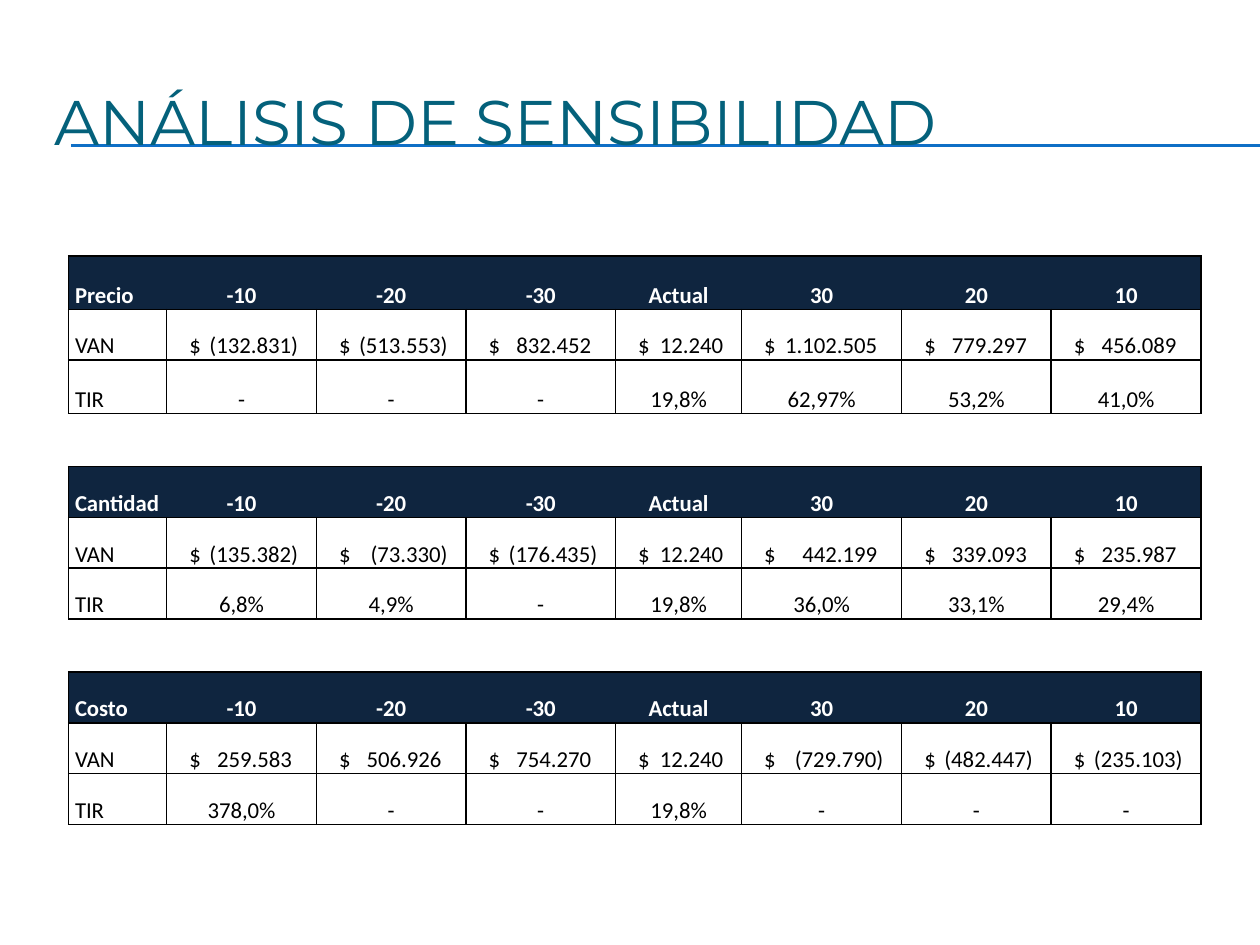
import pptx
import pptx.dml.color
import pptx.enum.shapes
import pptx.enum.text
import pptx.oxml
import pptx.oxml.ns
import pptx.util
from lxml import etree

Pt = pptx.util.Pt
qn = pptx.oxml.ns.qn

NAVY, TEAL, BLUE, BLACK, WHITE = "0F253F", "04617B", "0F6FC6", "000000", "FFFFFF"

COLUMN_WIDTHS = [56, 85.5, 85.5, 85.5, 72, 91.5, 85.5, 85.5]
AMOUNT_WIDTHS = [0, 62, 62, 62, 52, 68, 62, 62]
ROW_HEIGHTS = [30.5, 29, 30.5, 30.5, 29, 29, 29, 30.5, 29, 29, 29]
CHANGES = ["-10", "-20", "-30", "Actual", "30", "20", "10"]
SCENARIOS = [
    ("Precio",
     ["(132.831)", "(513.553)", "832.452", "12.240", "1.102.505", "779.297", "456.089"],
     ["-", "-", "-", "19,8%", "62,97%", "53,2%", "41,0%"]),
    ("Cantidad",
     ["(135.382)", "(73.330)", "(176.435)", "12.240", "442.199", "339.093", "235.987"],
     ["6,8%", "4,9%", "-", "19,8%", "36,0%", "33,1%", "29,4%"]),
    ("Costo",
     ["259.583", "506.926", "754.270", "12.240", "(729.790)", "(482.447)", "(235.103)"],
     ["378,0%", "-", "-", "19,8%", "-", "-", "-"]),
]


def rgb(color):
    return pptx.dml.color.RGBColor.from_string(color)


def add_title(slide, text):
    s = slide.shapes.add_textbox(Pt(24), Pt(36), Pt(684), Pt(66))
    tf = s.text_frame
    tf.word_wrap = True
    tf.vertical_anchor = pptx.enum.text.MSO_ANCHOR.MIDDLE
    p = tf.paragraphs[0]
    p.text = text
    p.font.size = Pt(36)
    p.font.name = "Montserrat"
    p.font.color.rgb = rgb(TEAL)


def add_rule(slide, y):
    s = slide.shapes.add_connector(
        pptx.enum.shapes.MSO_CONNECTOR.STRAIGHT, Pt(40.5), Pt(y), Pt(720), Pt(y))
    s.line.color.rgb = rgb(BLUE)
    s.line.width = Pt(0.75)
    etree.SubElement(s._element.spPr, qn("a:effectLst"))


def set_borders(cell, sides):
    """Draw the named sides (letters of LRTB) in black and hide the others."""
    tcPr = cell._tc.get_or_add_tcPr()
    for i, side in enumerate("LRTB"):
        ln = etree.Element(qn(f"a:ln{side}"), w=str(Pt(1)))
        if side in sides:
            fill = etree.SubElement(ln, qn("a:solidFill"))
            etree.SubElement(fill, qn("a:srgbClr"), val=BLACK)
        else:
            etree.SubElement(ln, qn("a:noFill"))
        tcPr.insert(i, ln)


def style_cell(cell, sides, fill=None):
    if fill:
        cell.fill.solid()
        cell.fill.fore_color.rgb = rgb(fill)
    else:
        cell.fill.background()
    set_borders(cell, sides)


def write_cell(cell, text, header=False, centred=True):
    cell.vertical_anchor = pptx.enum.text.MSO_ANCHOR.BOTTOM
    cell.margin_left = cell.margin_right = Pt(3.6)
    cell.margin_top = cell.margin_bottom = 0
    p = cell.text_frame.paragraphs[0]
    p.text = text
    align = pptx.enum.text.PP_ALIGN
    p.alignment = align.CENTER if centred else align.LEFT
    p.font.size = Pt(13)
    p.font.name = "Calibri"
    p.font.bold = header
    p.font.color.rgb = rgb(WHITE if header else BLACK)


def write_amount(cell, amount, width):
    """Put the currency sign left and the amount at a right tab, brackets hanging."""
    write_cell(cell, f"$\t{amount}", centred=False)
    cell.margin_left = Pt(13)
    position = width if amount.endswith(")") else width - 3.5
    pPr = cell.text_frame.paragraphs[0]._p.get_or_add_pPr()
    tabs = etree.Element(qn("a:tabLst"))
    etree.SubElement(tabs, qn("a:tab"), pos=str(Pt(position)), algn="r")
    pPr.insert(0, tabs)


def fill_scenario(table, top, name, amounts, rates):
    last = len(CHANGES)
    for c, text in enumerate([name] + CHANGES):
        cell = table.cell(top, c)
        write_cell(cell, text, header=True, centred=c > 0)
        style_cell(cell, "TB" + {0: "L", last: "R"}.get(c, ""), NAVY)
    for c, text in enumerate(["VAN"] + amounts):
        cell = table.cell(top + 1, c)
        if c:
            write_amount(cell, text, AMOUNT_WIDTHS[c])
        else:
            write_cell(cell, text, centred=False)
        style_cell(cell, "LRTB")
    for c, text in enumerate(["TIR"] + rates):
        cell = table.cell(top + 2, c)
        write_cell(cell, text, centred=c > 0)
        style_cell(cell, "LRTB")


def add_sensitivity_table(slide):
    table = slide.shapes.add_table(
        len(ROW_HEIGHTS), len(COLUMN_WIDTHS), Pt(39.25), Pt(146.25),
        Pt(sum(COLUMN_WIDTHS)), Pt(sum(ROW_HEIGHTS))).table
    table.first_row = table.horz_banding = False
    for column, width in zip(table.columns, COLUMN_WIDTHS):
        column.width = Pt(width)
    for row, height in zip(table.rows, ROW_HEIGHTS):
        row.height = Pt(height)
    for i, scenario in enumerate(SCENARIOS):
        top = 4 * i
        fill_scenario(table, top, *scenario)
        if i:
            for cell in table.rows[top - 1].cells:
                style_cell(cell, "TB")


def main():
    prs = pptx.Presentation()
    prs.slide_width, prs.slide_height = Pt(720), Pt(540)
    slide = prs.slides.add_slide(prs.slide_layouts[6])
    for y in (82.8, 83.4):
        add_rule(slide, y)
    add_title(slide, "ANÁLISIS DE SENSIBILIDAD")
    add_sensitivity_table(slide)
    prs.save("out.pptx")


if __name__ == "__main__":
    main()
